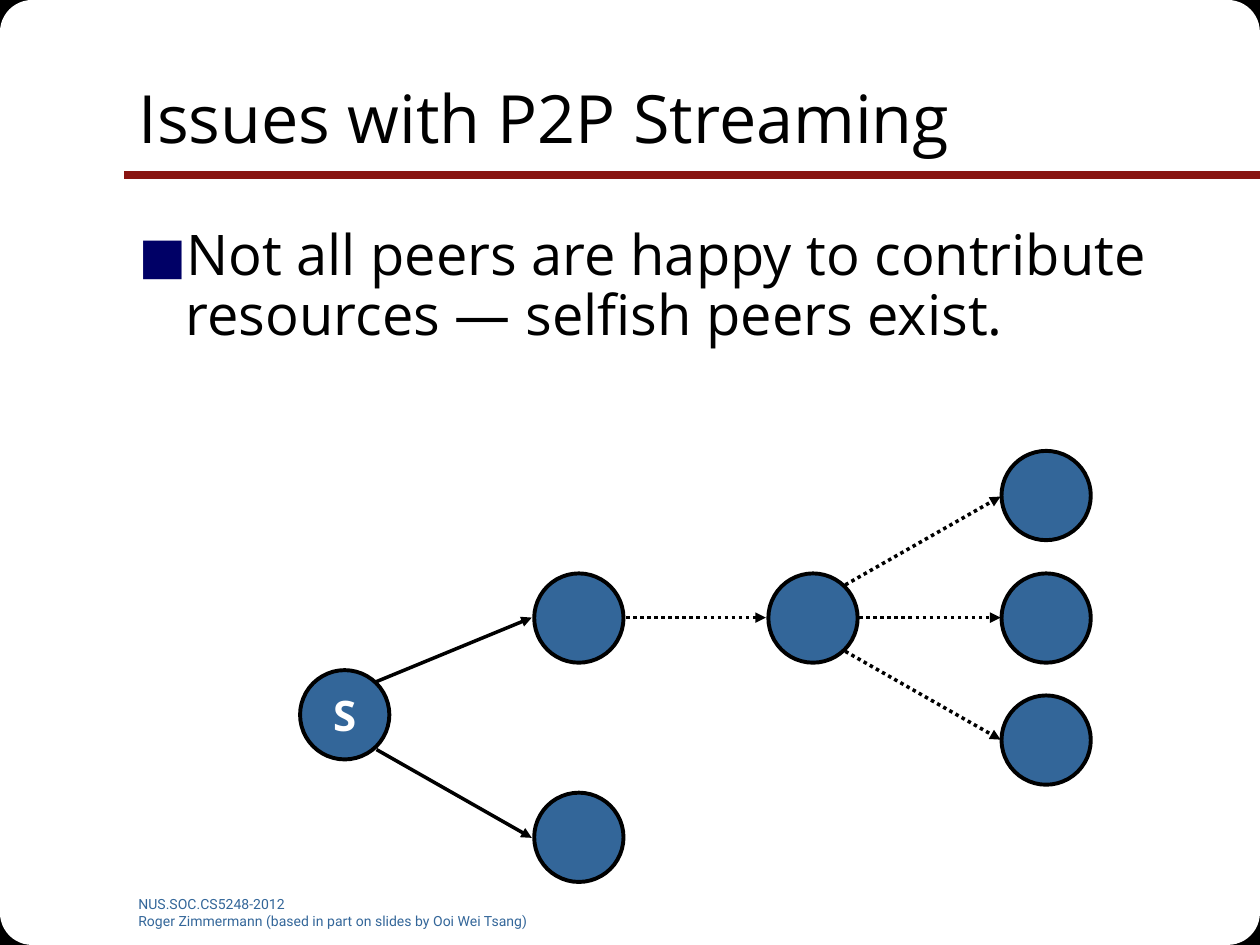
from lxml.etree import SubElement
from pptx import Presentation
from pptx.dml.color import RGBColor
from pptx.enum.dml import MSO_LINE
from pptx.enum.shapes import MSO_CONNECTOR, MSO_SHAPE
from pptx.enum.text import MSO_ANCHOR, MSO_AUTO_SIZE, PP_ALIGN
from pptx.oxml import parse_xml
from pptx.oxml.ns import nsdecls, qn
from pptx.util import Cm, Pt


def paint(color, value):
    color.rgb = RGBColor.from_string(value)


def style(frame, font, size, color):
    for par in frame.paragraphs:
        for run in par.runs:
            run.font.name = font
            run.font.size = Pt(size)
            paint(run.font.color, color)


deck = Presentation()
deck.slide_width, deck.slide_height = Cm(25.4), Cm(19.05)
slide = deck.slides.add_slide(deck.slide_layouts[1])
shapes = slide.shapes
title, body = slide.placeholders

for kind, side, fill in [(MSO_SHAPE.RECTANGLE, 1.1, "000000"),
                         (MSO_SHAPE.ROUNDED_RECTANGLE, 3.89, "FFFFFF")]:
    for left in (0, 25.4 - side):
        for top in (0, 19.05 - side):
            corner = shapes.add_shape(kind, Cm(left), Cm(top), Cm(side), Cm(side))
            corner.shadow.inherit = False
            corner.fill.solid()
            paint(corner.fill.fore_color, fill)
            corner.line.fill.background()

footer = shapes.add_textbox(Cm(2.54), Cm(17.93), Cm(8.69), Cm(0.71))
frame = footer.text_frame
frame.word_wrap = True
frame.text = ("NUS.SOC.CS5248-2012\n"
              "Roger Zimmermann (based in part on slides by Ooi Wei Tsang)")
style(frame, "Roboto", 8, "336699")

title.left, title.top, title.width, title.height = Cm(2.54), Cm(0.76), Cm(21.59), Cm(3.18)
frame = title.text_frame
frame.text = "Issues with P2P Streaming"
frame.auto_size = MSO_AUTO_SIZE.NONE
frame.vertical_anchor = MSO_ANCHOR.MIDDLE
frame.paragraphs[0].alignment = PP_ALIGN.LEFT
style(frame, "Open Sans", 38, "000000")

body.left, body.top, body.width, body.height = Cm(2.54), Cm(4.45), Cm(21.59), Cm(12.57)
frame = body.text_frame
frame.text = "Not all peers are happy to contribute resources — selfish peers exist."
frame.auto_size = MSO_AUTO_SIZE.NONE
style(frame, "Open Sans", 32, "000000")
item = frame.paragraphs[0]
item.line_spacing = 0.9
item.space_before = Pt(6.4)
props = item._p.get_or_add_pPr()
props.set("marL", str(Cm(0.95)))
props.set("indent", str(-Cm(0.95)))
for mark in ('<a:buClr %s><a:srgbClr val="000066"/></a:buClr>',
             '<a:buSzPct %s val="90000"/>',
             '<a:buFont %s typeface="Open Sans"/>',
             '<a:buChar %s char="■"/>'):
    props.append(parse_xml(mark % nsdecls("a")))

for holder in (title, body):
    shapes._spTree.append(holder._element)

size = 1.8
peers = [(6.05, 13.51, "S"), (15.49, 11.56, ""), (10.77, 15.98, ""), (10.77, 11.56, ""),
         (20.19, 9.09, ""), (20.19, 11.56, ""), (20.19, 14.02, "")]
for left, top, name in peers:
    peer = shapes.add_shape(MSO_SHAPE.OVAL, Cm(left), Cm(top), Cm(size), Cm(size))
    peer.shadow.inherit = False
    peer.fill.solid()
    paint(peer.fill.fore_color, "336699")
    paint(peer.line.color, "000000")
    peer.line.width = Pt(2.25)
    if name:
        frame = peer.text_frame
        frame.text = name
        frame.word_wrap = False
        frame.vertical_anchor = MSO_ANCHOR.MIDDLE
        frame.paragraphs[0].alignment = PP_ALIGN.CENTER
        style(frame, "Open Sans", 24, "FFFFFF")
        frame.paragraphs[0].runs[0].font.bold = True

links = [(25.4, 3.53, 2.49, 3.53, "rule"),
         (7.59, 13.74, 10.72, 12.45, "solid"),
         (7.59, 15.11, 10.72, 16.89, "solid"),
         (12.62, 12.45, 15.44, 12.45, "dots"),
         (17.04, 11.79, 20.17, 10.01, "dots"),
         (17.32, 12.45, 20.17, 12.45, "dots"),
         (17.04, 13.13, 20.17, 14.91, "dots")]
for x, y, endx, endy, look in links:
    link = shapes.add_connector(MSO_CONNECTOR.STRAIGHT, Cm(x), Cm(y), Cm(endx), Cm(endy))
    paint(link.line.color, "891411" if look == "rule" else "000000")
    link.line.width = Pt(4.5 if look == "rule" else 2)
    if look == "dots":
        link.line.dash_style = MSO_LINE.ROUND_DOT
    if look != "rule":
        SubElement(link.line._get_or_add_ln(), qn("a:tailEnd"), type="triangle")
    SubElement(link._element.spPr, qn("a:effectLst"))

deck.save("out.pptx")
